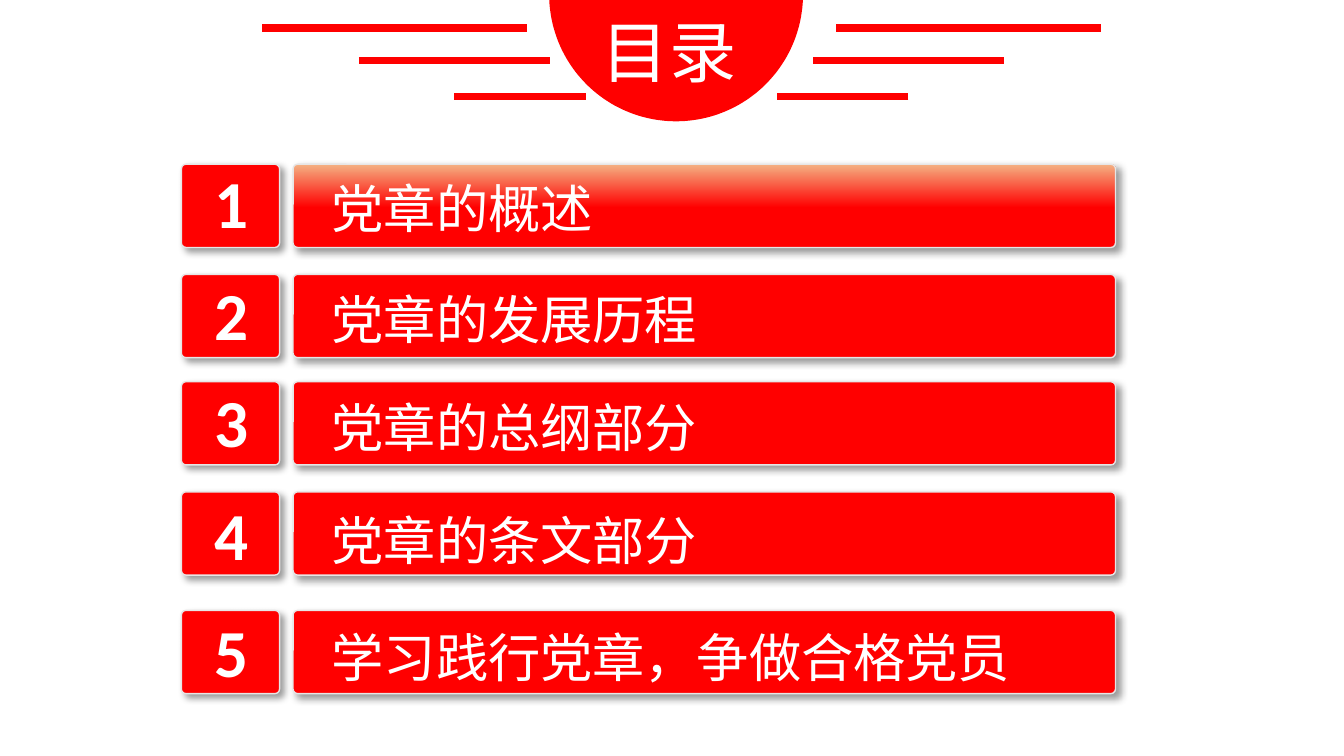
"""Build a contents slide with a title badge and five numbered bars."""
import math

from lxml import etree
from pptx import Presentation
from pptx import util as u
from pptx.dml import color
from pptx.enum import shapes, text
from pptx.oxml import ns

COLORS = {"red": "FF0000", "peach": "F4B183", "edge": "E7E6E6", "white": "FFFFFF", "shadow": "000000"}
CHINESE = {"name": "Noto Sans CJK SC", "size": u.Pt(28)}
TITLE = {"name": "Noto Sans CJK SC", "size": u.Pt(36)}
NUMBER = {"name": "Calibri", "size": u.Pt(36), "bold": True}
ROWS = [
    ("党章的概述", 88, 90.7),
    ("党章的发展历程", 147, 150.5),
    ("党章的总纲部分", 204.5, 208),
    ("党章的条文部分", 263.5, 268.5),
    ("学习践行党章，争做合格党员", 327, 331.2),
]
STRIPES = [(140.4, 282.2, 15.1), (192.2, 294.5, 32.4), (243.4, 313.9, 51.8)]
MIRROR_SUM = 730


def rgb(name):
    return color.RGBColor.from_string(COLORS[name])


def points(*values):
    return [u.Pt(value) for value in values]


def add_effects(shape, shadowed=False):
    effects = etree.SubElement(shape._element.spPr, ns.qn("a:effectLst"))
    if shadowed:
        shadow = etree.SubElement(
            effects, ns.qn("a:outerShdw"), blurRad=str(u.Pt(4)), dist=str(u.Pt(3)),
            dir="2700000", algn="tl", rotWithShape="0")
        tint = etree.SubElement(shadow, ns.qn("a:srgbClr"), val=COLORS["shadow"])
        etree.SubElement(tint, ns.qn("a:alpha"), val="40000")


def add_bar(page, left, top, width, gradient=False):
    bar = page.shapes.add_shape(
        shapes.MSO_SHAPE.ROUNDED_RECTANGLE, *points(left, top, width, 44.6))
    bar.adjustments[0] = 0.055
    if gradient:
        bar.fill.gradient()
        bar.fill.gradient_angle = 90
        for stop, position, name in zip(bar.fill.gradient_stops, (0.48, 1), ("red", "peach")):
            stop.position = position
            stop.color.rgb = rgb(name)
    else:
        bar.fill.solid()
        bar.fill.fore_color.rgb = rgb("red")
    bar.line.color.rgb = rgb("edge")
    bar.line.width = u.Pt(0.75)
    add_effects(bar, shadowed=True)


def add_label(page, words, area, style, wrap=False, align=text.PP_ALIGN.LEFT):
    frame = page.shapes.add_textbox(*points(*area)).text_frame
    frame.word_wrap = wrap
    frame.auto_size = text.MSO_AUTO_SIZE.SHAPE_TO_FIT_TEXT
    para = frame.paragraphs[0]
    para.alignment = align
    span = para.add_run()
    span.text = words
    for key, value in style.items():
        setattr(span.font, key, value)
    span.font.color.rgb = rgb("white")
    etree.SubElement(span._r.get_or_add_rPr(), ns.qn("a:ea"), typeface=style["name"])


def add_stripe(page, start, end, height):
    stripe = page.shapes.add_connector(
        shapes.MSO_CONNECTOR.STRAIGHT, *points(start, height, end, height))
    stripe.line.color.rgb = rgb("red")
    stripe.line.width = u.Pt(4)
    add_effects(stripe)


def add_badge(page, center_x, center_y, radius, steps=90):
    first = math.asin(-center_y / radius)
    angles = [first + (math.pi - 2 * first) * step / steps for step in range(steps + 1)]
    outline = [points(center_x + radius * math.cos(angle), center_y + radius * math.sin(angle))
               for angle in angles]
    builder = page.shapes.build_freeform(*outline[0])
    builder.add_line_segments(outline[1:], close=True)
    badge = builder.convert_to_shape()
    badge.fill.solid()
    badge.fill.fore_color.rgb = rgb("red")
    badge.line.fill.background()
    badge.shadow.inherit = False


def main():
    deck = Presentation()
    deck.slide_width, deck.slide_height = points(720, 405)
    page = deck.slides.add_slide(deck.slide_layouts[6])
    for number, (words, top, text_top) in enumerate(ROWS, 1):
        add_bar(page, 157, top, 440.6, gradient=number == 1)
        add_bar(page, 97.2, top, 52.6)
        add_label(page, words, (170.6, text_top, 400, 39.6), CHINESE, wrap=True)
        add_label(page, str(number), (107.3, text_top - 7.8, 33.1, 49), NUMBER,
                  align=text.PP_ALIGN.CENTER)
    add_badge(page, 362.2, -3, 68)
    for start, end, height in STRIPES:
        add_stripe(page, start, end, height)
        add_stripe(page, MIRROR_SUM - start, MIRROR_SUM - end, height)
    add_label(page, "目录", (315.4, 2.2, 87.1, 51.1), TITLE)
    deck.save("out.pptx")


if __name__ == "__main__":
    main()
